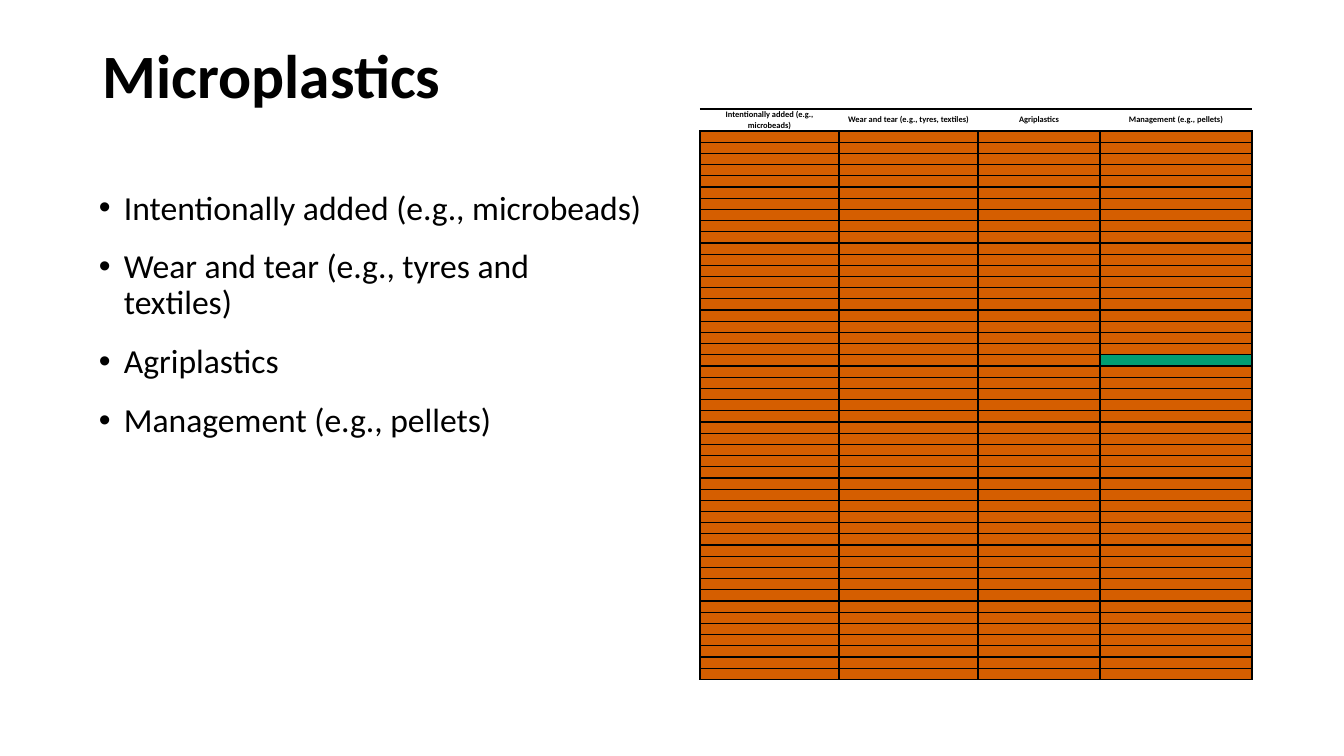
"""Build the Microplastics slide: a bullet list beside a colour-coded table."""
from dataclasses import dataclass

from lxml import etree
from pptx import Presentation
from pptx import util as u
from pptx.dml.color import RGBColor
from pptx.enum import text
from pptx.oxml.ns import qn

TITLE = "Microplastics"
BULLETS = [
    "Intentionally added (e.g., microbeads)",
    "Wear and tear (e.g., tyres and \vtextiles)",
    "Agriplastics",
    "Management (e.g., pellets)",
]
COLUMNS = [
    ("Intentionally added (e.g., microbeads)", 139),
    ("Wear and tear (e.g., tyres, textiles)", 139),
    ("Agriplastics", 122),
    ("Management (e.g., pellets)", 152),
]
BODY_ROWS = 49
GREEN_CELLS = {(21, 3)}

SLIDE_SIZE = (1344, 756)
TITLE_BOX = (93, 40, 1159, 146)
BULLET_BOX = (89, 186, 584, 495)
TABLE_ORIGIN = (700, 109)
HEADER_HEIGHT = 22
BODY_HEIGHT = 549
CELL_MARGIN = 5
BULLET_INDENT = 25


@dataclass(frozen=True)
class Theme:
    font: str = "Calibri"
    ink: str = "000000"
    orange: str = "D55E00"
    green: str = "009E73"
    title_size: int = 44
    bullet_size: int = 24
    table_size: int = 6
    border: int = 1


THEME = Theme()


def px(length):
    return u.Emu(round(length * 914400 / 100.8))


def style_paragraph(paragraph, size, bold=False):
    for run in paragraph.runs:
        run.font.name = THEME.font
        run.font.size = u.Pt(size)
        run.font.bold = bold
        run.font.color.rgb = RGBColor.from_string(THEME.ink)


def add_text(slide, box, lines, size, bold=False):
    frame = slide.shapes.add_textbox(*map(px, box)).text_frame
    frame.word_wrap = True
    for index, line in enumerate(lines):
        paragraph = frame.paragraphs[0] if index == 0 else frame.add_paragraph()
        paragraph.text = line
        paragraph.line_spacing = 0.9
        style_paragraph(paragraph, size, bold)
    return frame


def add_bullet(paragraph):
    paragraph.space_before = u.Pt(10)
    paragraph.space_after = u.Pt(6)
    properties = paragraph._p.get_or_add_pPr()
    properties.set("marL", str(px(BULLET_INDENT)))
    properties.set("indent", str(-px(BULLET_INDENT)))
    etree.SubElement(properties, qn("a:buFont"), typeface="Arial")
    etree.SubElement(properties, qn("a:buChar"), char="•")


def set_borders(cell, visible_sides):
    properties = cell._tc.get_or_add_tcPr()
    for side in "LRTB":
        line = etree.SubElement(properties, qn(f"a:ln{side}"), w=str(u.Pt(THEME.border)))
        if side in visible_sides:
            fill = etree.SubElement(line, qn("a:solidFill"))
            etree.SubElement(fill, qn("a:srgbClr"), val=THEME.ink)
        else:
            etree.SubElement(line, qn("a:noFill"))


def format_header(cell, heading):
    set_borders(cell, "TB")
    cell.fill.background()
    cell.vertical_anchor = text.MSO_ANCHOR.MIDDLE
    cell.text_frame.text = heading
    paragraph = cell.text_frame.paragraphs[0]
    paragraph.alignment = text.PP_ALIGN.CENTER
    style_paragraph(paragraph, THEME.table_size, True)


def format_body(cell, color):
    set_borders(cell, "LRTB")
    cell.fill.solid()
    cell.fill.fore_color.rgb = RGBColor.from_string(color)
    paragraph = cell.text_frame.paragraphs[0]
    etree.SubElement(paragraph._p, qn("a:endParaRPr"), sz=str(THEME.table_size * 100))


def add_rating_table(slide):
    width = sum(column_width for _, column_width in COLUMNS)
    size = (width, HEADER_HEIGHT + BODY_HEIGHT)
    table = slide.shapes.add_table(
        BODY_ROWS + 1, len(COLUMNS), *map(px, TABLE_ORIGIN + size)).table
    table.first_row = table.horz_banding = False
    for column, (_, column_width) in zip(table.columns, COLUMNS):
        column.width = px(column_width)
    for row_index, row in enumerate(table.rows):
        row.height = px(BODY_HEIGHT / BODY_ROWS if row_index else HEADER_HEIGHT)
        for column_index, cell in enumerate(row.cells):
            cell.margin_left = cell.margin_right = px(CELL_MARGIN)
            cell.margin_top = cell.margin_bottom = 0
            if row_index == 0:
                format_header(cell, COLUMNS[column_index][0])
            else:
                is_green = (row_index, column_index) in GREEN_CELLS
                format_body(cell, THEME.green if is_green else THEME.orange)


def main():
    presentation = Presentation()
    presentation.slide_width, presentation.slide_height = map(px, SLIDE_SIZE)
    slide = presentation.slides.add_slide(presentation.slide_layouts[6])
    add_text(slide, TITLE_BOX, [TITLE], THEME.title_size, bold=True)
    bullets = add_text(slide, BULLET_BOX, BULLETS, THEME.bullet_size)
    for paragraph in bullets.paragraphs:
        add_bullet(paragraph)
    add_rating_table(slide)
    presentation.save("out.pptx")


if __name__ == "__main__":
    main()
